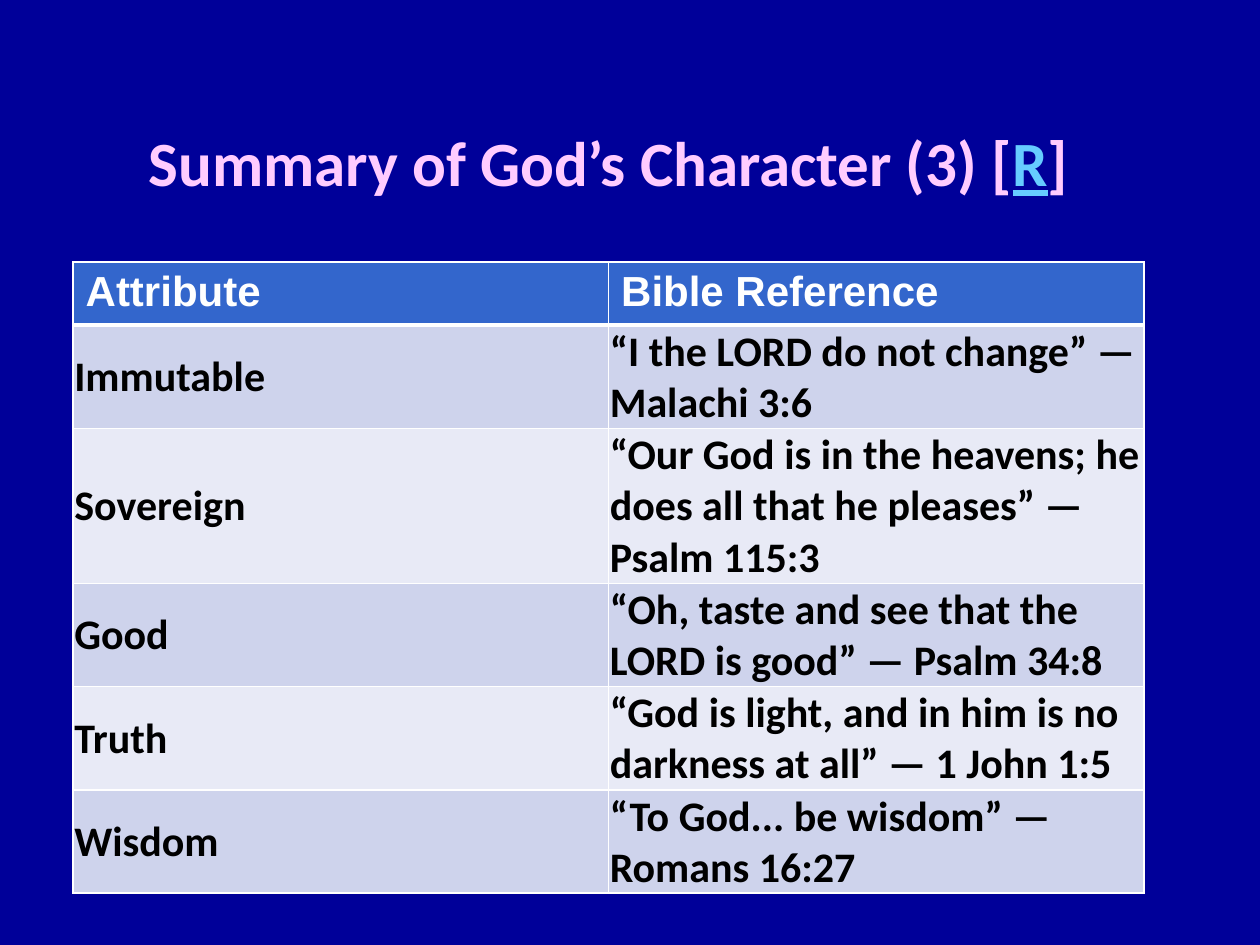
from lxml.etree import SubElement as Sub
from pptx import Presentation
from pptx.dml.color import RGBColor
from pptx.enum.text import MSO_ANCHOR as Anchor, PP_ALIGN as Align
from pptx.oxml.ns import qn
from pptx.util import Inches, Pt

ROWS = [
    # attribute, verse, lines the verse takes
    ("Immutable", "“I the LORD do not change” — Malachi 3:6", 2),
    ("Sovereign", "“Our God is in the heavens; he does all that he pleases” — Psalm 115:3", 3),
    ("Good", "“Oh, taste and see that the LORD is good” — Psalm 34:8", 2),
    ("Truth", "“God is light, and in him is no darkness at all” — 1 John 1:5", 2),
    ("Wisdom", "“To God... be wisdom” — Romans 16:27", 2),
]
LEFT, WIDTH = 0.58, 8.5
LINE = 0.41
BANDS = ("CED3EC", "E8EAF6")


def color(code):
    return RGBColor.from_string(code)


class Deck:
    """Holds the text style and the current slide."""

    font = "Calibri"
    edge = "FFFFFF"

    def __init__(self, prs, back):
        self.slide = prs.slides.add_slide(prs.slide_layouts[6])
        fill = self.slide.background.fill
        fill.solid()
        fill.fore_color.rgb = color(back)

    def run(self, para, text, size, ink, font=None, under=False):
        run = para.add_run()
        run.text = text
        face = run.font
        face.name = font or self.font
        face.size = Pt(size)
        face.bold = True
        face.underline = under
        face.color.rgb = color(ink)

    def title(self, parts, top, height):
        box = self.slide.shapes.add_textbox(
            Inches(LEFT), Inches(top), Inches(WIDTH), Inches(height))
        frame = box.text_frame
        frame.word_wrap = True
        frame.vertical_anchor = Anchor.MIDDLE
        para = frame.paragraphs[0]
        para.alignment = Align.CENTER
        for text, ink, under in parts:
            self.run(para, text, 36, ink, under=under)

    def border(self, cell, top=1, bottom=1):
        props = cell._tc.get_or_add_tcPr()
        for side, width in (("L", 1), ("R", 1), ("T", top), ("B", bottom)):
            line = Sub(props, qn("a:ln" + side), w=str(Pt(width)))
            solid = Sub(line, qn("a:solidFill"))
            Sub(solid, qn("a:srgbClr"), val=self.edge)

    def cell(self, cell, text, fill, ink, font=None, top=1, bottom=1):
        self.border(cell, top, bottom)
        cell.fill.solid()
        cell.fill.fore_color.rgb = color(fill)
        self.run(cell.text_frame.paragraphs[0], text, 24, ink, font)

    def table(self, heads, rows, top):
        tall = [LINE] + [LINE * lines for *_, lines in rows]
        grid = self.slide.shapes.add_table(
            len(tall), len(heads), Inches(LEFT), Inches(top),
            Inches(WIDTH), Inches(sum(tall))).table
        for row, height in zip(grid.rows, tall):
            row.height = Inches(height)
        for col, head in enumerate(heads):
            self.cell(grid.cell(0, col), head, "3366CC", "FFFFFF", "Arial", bottom=3)
        for num, (name, verse, _) in enumerate(rows, 1):
            for col, text in enumerate((name, verse)):
                cell = grid.cell(num, col)
                cell.margin_left = cell.margin_right = cell.margin_top = Inches(0.01)
                cell.margin_bottom = 0
                cell.vertical_anchor = Anchor.BOTTOM if col else Anchor.MIDDLE
                self.cell(cell, text, BANDS[(num - 1) % 2], "000000",
                          top=3 if num == 1 else 1)


def main():
    prs = Presentation()
    prs.slide_width, prs.slide_height = Inches(10), Inches(7.5)
    deck = Deck(prs, "000099")
    deck.title([("Summary of God’s Character (3) [", "FFCCFF", False),
                ("R", "66CCFF", True),
                ("]", "FFCCFF", False)], 0.67, 1.22)
    deck.table(("Attribute", "Bible Reference"), ROWS, 2.08)
    prs.save("out.pptx")


if __name__ == "__main__":
    main()
